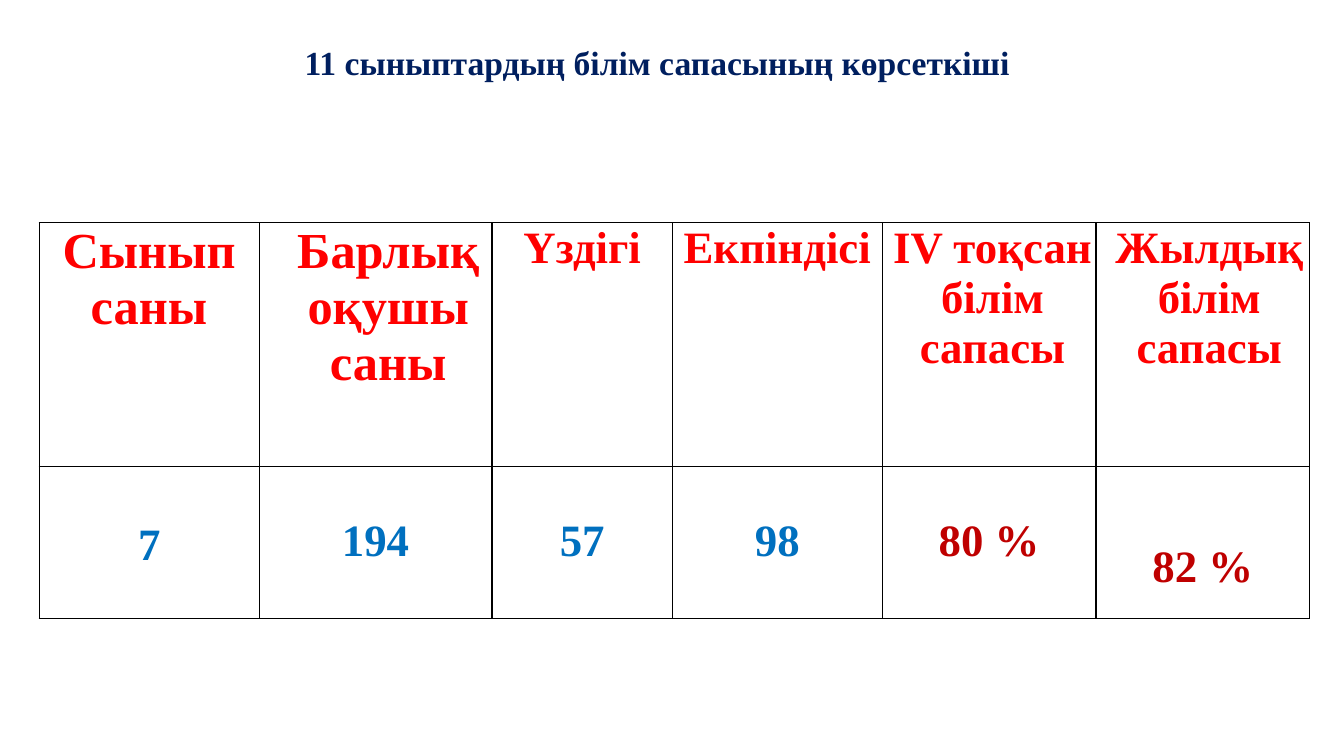
from lxml import etree
from pptx import Presentation
from pptx.dml.color import RGBColor
from pptx.enum.text import MSO_ANCHOR, MSO_AUTO_SIZE, PP_ALIGN
from pptx.oxml.ns import qn
from pptx.util import Inches, Pt

LEFT, CENTER = PP_ALIGN.LEFT, PP_ALIGN.CENTER
TOP = MSO_ANCHOR.TOP
NO_AUTOFIT = MSO_AUTO_SIZE.NONE
TITLE_ONLY = 5

FONT = "Times New Roman"
NAVY, RED, BLUE, DARK_RED, BLACK = "001F5F", "FF0000", "0070BF", "BF0000", "000000"

TITLE_BOX = (2.52, 0.03, 8.87, 1.16)
TABLE_BOX = (0.39, 2.21, 12.6, 3.93)
COLUMN_WIDTHS = (2.18, 2.31, 1.79, 2.08, 2.12, 2.12)
ROW_HEIGHTS = (2.42, 1.51)

# Header: text, size, alignment, left indent, first-line indent
HEADERS = (
    ("Сынып саны", 36, LEFT, 0.51, -0.28),
    ("Барлық оқушы саны", 36, CENTER, 0.25, 0),
    ("Үздігі", 32, CENTER, 0, 0),
    ("Екпіндісі", 32, CENTER, 0, 0),
    ("IV тоқсан білім сапасы", 32, CENTER, 0.07, 0),
    ("Жылдық білім сапасы", 32, CENTER, 0.13, 0),
)
# Value: text, colour, alignment, left indent, top margin
VALUES = (
    ("7", BLUE, CENTER, 0, 0.53),
    ("194", BLUE, CENTER, 0, 0.49),
    ("57", BLUE, CENTER, 0, 0.49),
    ("98", BLUE, CENTER, 0, 0.49),
    ("80 %", DARK_RED, LEFT, 0.56, 0.49),
    ("82 %", DARK_RED, LEFT, 0.56, 0.75),
)


def color(hex_value):
    return RGBColor.from_string(hex_value)


def write(text_frame, text, size, hex_color, alignment, indent=0, first_line=0):
    """Fill a text frame with one bold, indented paragraph."""
    text_frame.text = text
    paragraph = text_frame.paragraphs[0]
    paragraph.alignment = alignment
    properties = paragraph._p.get_or_add_pPr()
    properties.set("marL", str(Inches(indent)))
    properties.set("indent", str(Inches(first_line)))
    font = paragraph.runs[0].font
    font.name, font.size, font.bold = FONT, Pt(size), True
    font.color.rgb = color(hex_color)


def format_cell(cell, top_margin):
    """Clear the fill, set the margins and draw thin borders."""
    cell.fill.background()
    cell.vertical_anchor = TOP
    cell.margin_left = cell.margin_right = cell.margin_bottom = 0
    cell.margin_top = Inches(top_margin)
    properties = cell._tc.get_or_add_tcPr()
    for position, side in enumerate(("a:lnL", "a:lnR", "a:lnT", "a:lnB")):
        line = etree.Element(qn(side), w=str(Pt(1)))
        fill = etree.SubElement(line, qn("a:solidFill"))
        etree.SubElement(fill, qn("a:srgbClr"), val=BLACK)
        properties.insert(position, line)


def add_title(slide, box):
    title = slide.shapes.title
    title.left, title.top, title.width, title.height = map(Inches, box)
    frame = title.text_frame
    frame.margin_left = frame.margin_right = frame.margin_bottom = 0
    frame.margin_top = Inches(0.39)
    frame.vertical_anchor = TOP
    frame.word_wrap = True
    frame.auto_size = NO_AUTOFIT
    write(frame, "11 сыныптардың білім сапасының көрсеткіші", 24, NAVY, LEFT, 0.5)
    frame.paragraphs[0].space_before = Pt(1)


def add_quality_table(slide, box):
    frame = slide.shapes.add_table(len(ROW_HEIGHTS), len(COLUMN_WIDTHS), *map(Inches, box))
    table = frame.table
    table.first_row = table.horz_banding = False
    for column, width in zip(table.columns, COLUMN_WIDTHS):
        column.width = Inches(width)
    for row, height in zip(table.rows, ROW_HEIGHTS):
        row.height = Inches(height)

    # Header row
    for cell, (text, size, alignment, indent, first_line) in zip(table.rows[0].cells, HEADERS):
        format_cell(cell, 0.01)
        write(cell.text_frame, text, size, RED, alignment, indent, first_line)

    # Value row
    for cell, (text, hex_color, alignment, indent, margin) in zip(table.rows[1].cells, VALUES):
        format_cell(cell, margin)
        write(cell.text_frame, text, 32, hex_color, alignment, indent)


def main():
    presentation = Presentation()
    presentation.slide_width, presentation.slide_height = Inches(13.33), Inches(7.5)
    slide = presentation.slides.add_slide(presentation.slide_layouts[TITLE_ONLY])
    add_quality_table(slide, TABLE_BOX)
    add_title(slide, TITLE_BOX)
    presentation.save("out.pptx")


if __name__ == "__main__":
    main()
